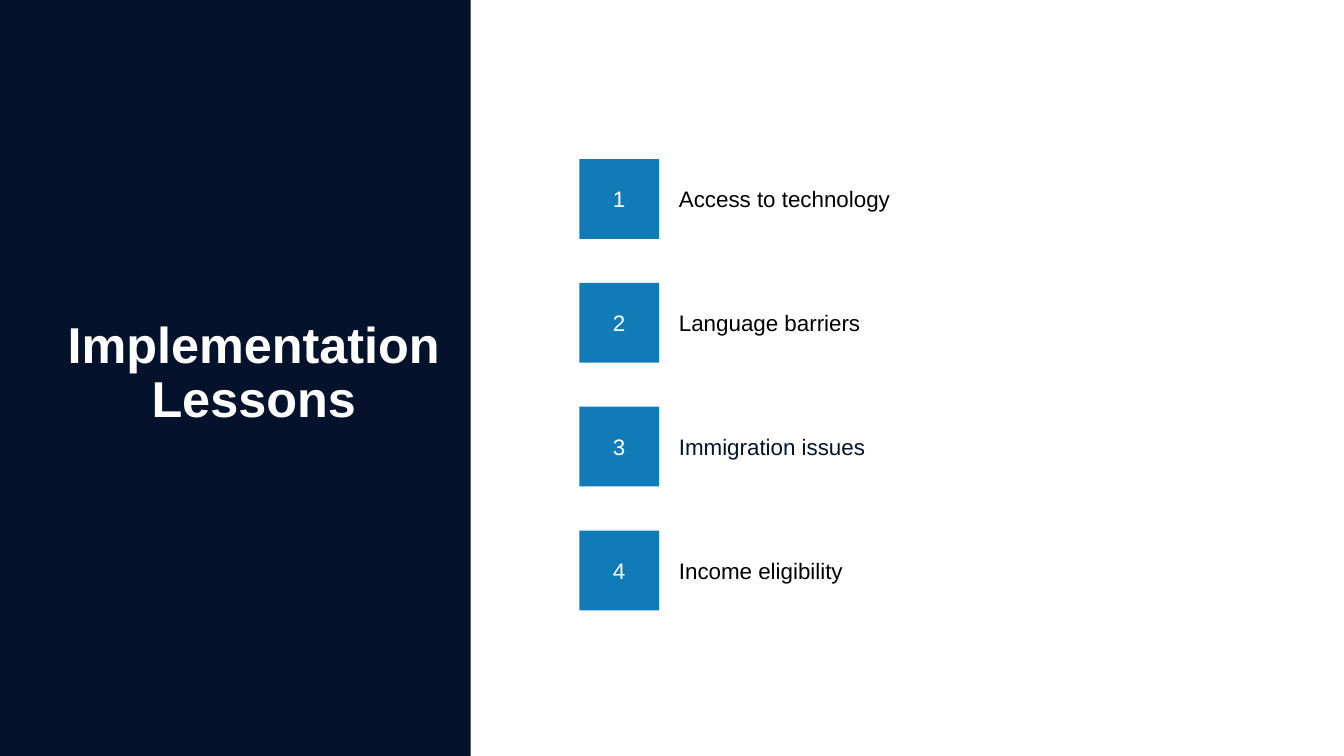
from pptx import Presentation
from pptx.dml.color import RGBColor
from pptx.enum.shapes import MSO_SHAPE
from pptx.enum.text import MSO_ANCHOR, MSO_AUTO_SIZE, PP_ALIGN
from pptx.util import Cm, Pt

COLORS = {"navy": "04122C", "blue": "107BB6", "white": "FFFFFF", "black": "000000"}
TITLE = "Implementation Lessons"
LESSONS = [
    ("Access to technology", "black"),
    ("Language barriers", "black"),
    ("Immigration issues", "navy"),
    ("Income eligibility", "black"),
]

LIST_LEFT, LIST_TOP = 14.6, 4.01
TILE, PITCH, LABEL_WIDTH = 2.01, 3.12, 10.69


def color(name):
    return RGBColor.from_string(COLORS[name])


def add_rectangle(page, left, top, width, height, fill):
    box = page.shapes.add_shape(
        MSO_SHAPE.RECTANGLE, Cm(left), Cm(top), Cm(width), Cm(height))
    box.shadow.inherit = False
    box.fill.solid()
    box.fill.fore_color.rgb = color(fill)
    box.line.fill.background()
    return box


def write(box, text, size, ink, align, anchor, insets=(0, 0, 0, 0), bold=False):
    frame = box.text_frame
    frame.word_wrap = True
    frame.auto_size = MSO_AUTO_SIZE.NONE
    frame.vertical_anchor = anchor
    (frame.margin_left, frame.margin_top,
     frame.margin_right, frame.margin_bottom) = map(Cm, insets)
    para = frame.paragraphs[0]
    para.text = text
    para.alignment = align
    para.font.name = "Arial"
    para.font.size = Pt(size)
    para.font.bold = bold
    para.font.color.rgb = color(ink)
    return para


def main():
    deck = Presentation()
    deck.slide_width, deck.slide_height = Cm(33.87), Cm(19.05)
    page = deck.slides.add_slide(deck.slide_layouts[5])

    panel = add_rectangle(page, 0, 0, 11.86, 19.05, "navy")
    title = page.shapes.title
    panel.element.addnext(title.element)
    title.left, title.top, title.width, title.height = map(Cm, (1.63, 7.95, 9.53, 2.85))
    heading = write(title, TITLE, 36, "white", PP_ALIGN.CENTER,
                    MSO_ANCHOR.BOTTOM, bold=True)
    heading.line_spacing = 0.9

    for index, (lesson, ink) in enumerate(LESSONS):
        top = LIST_TOP + index * PITCH
        label = page.shapes.add_textbox(
            Cm(LIST_LEFT + TILE), Cm(top), Cm(LABEL_WIDTH), Cm(TILE))
        write(label, lesson, 16, ink, PP_ALIGN.LEFT,
              MSO_ANCHOR.MIDDLE, (0.5, 0, 0, 0))
        tile = add_rectangle(page, LIST_LEFT, top, TILE, TILE, "blue")
        write(tile, str(index + 1), 16, "white", PP_ALIGN.CENTER,
              MSO_ANCHOR.MIDDLE, (0.1, 0.1, 0.1, 0.1))

    deck.save("out.pptx")


if __name__ == "__main__":
    main()
